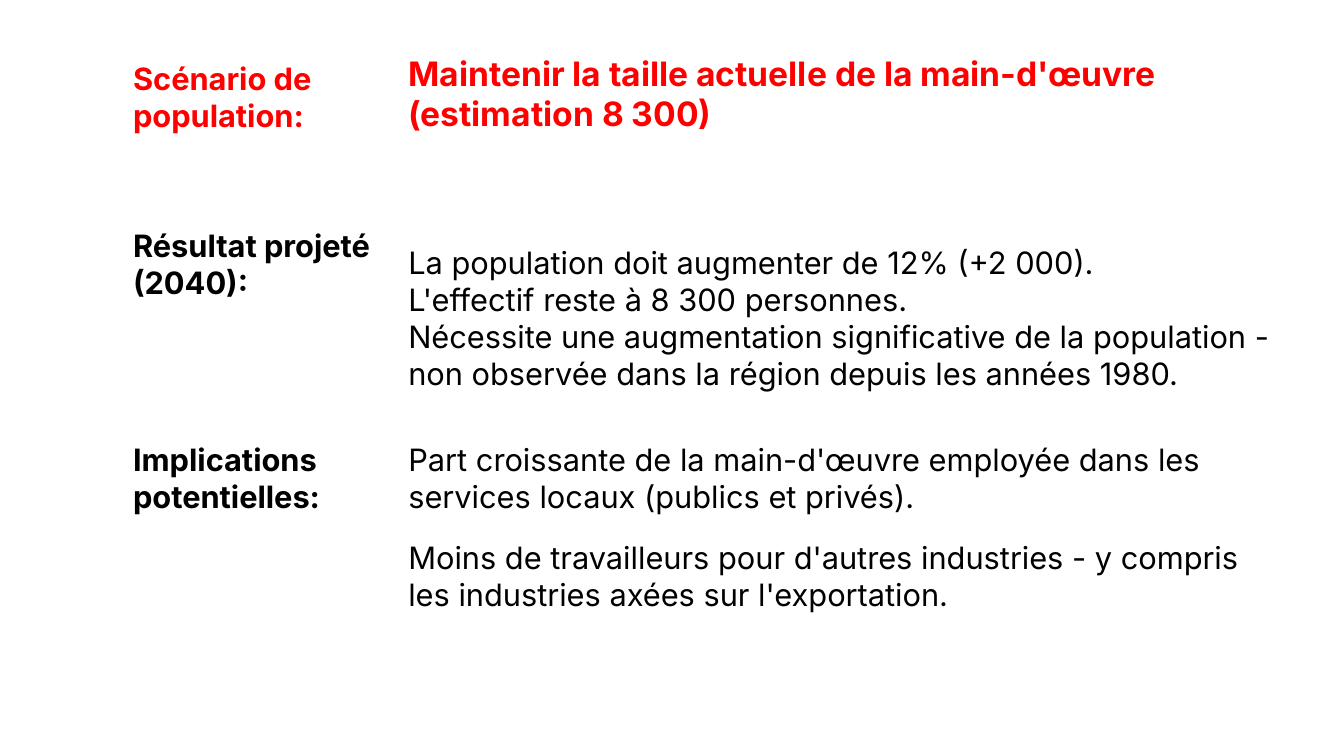
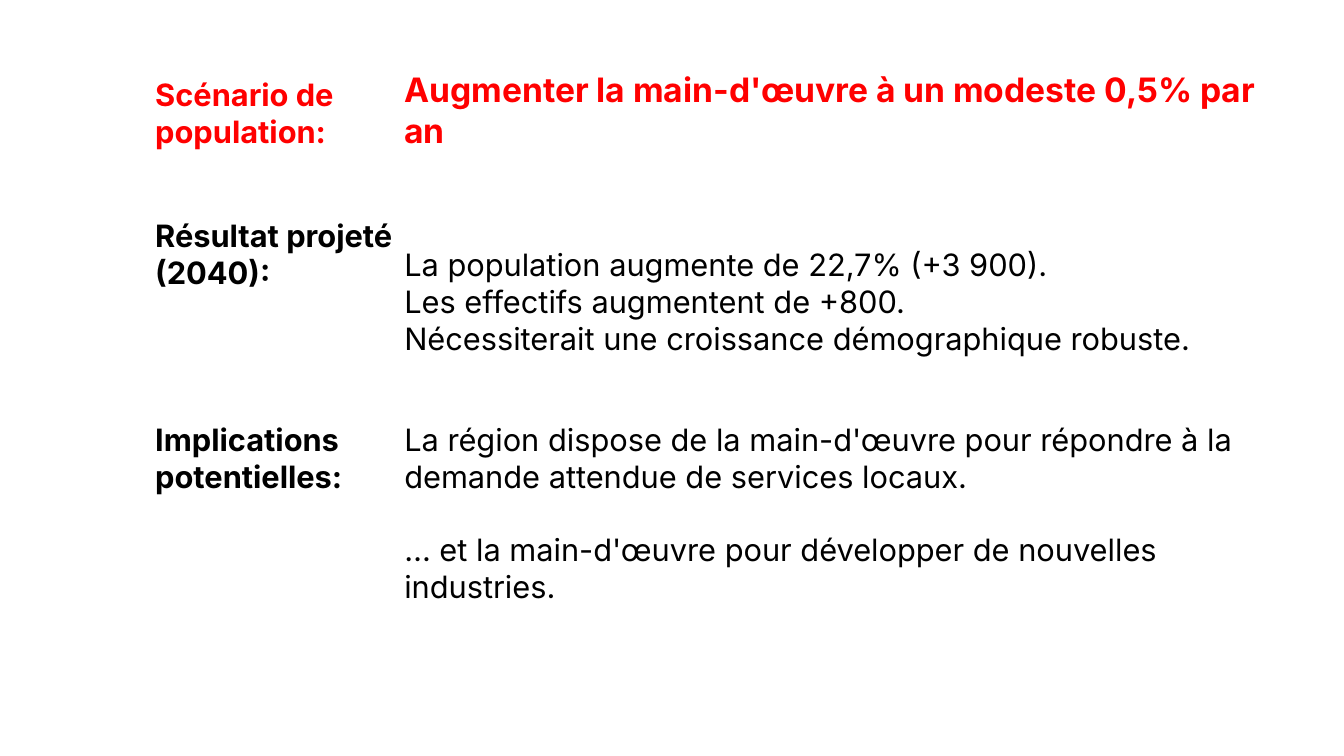
from dataclasses import dataclass

from lxml import etree
from pptx import Presentation
from pptx.dml.color import RGBColor
from pptx.enum.text import MSO_ANCHOR
from pptx.oxml.ns import qn
from pptx.util import Pt

PX = 9144  # 100 px to the inch
LOW, MID = MSO_ANCHOR.BOTTOM, MSO_ANCHOR.MIDDLE
BLANK = 6


@dataclass(frozen=True)
class Theme:
    font: str = "Inter"
    red: str = "FF0000"
    ink: str = "000000"
    rule: str = "FFFFFF"
    rule_w: int = 1
    title: int = 24
    body: int = 22
    inset: int = 1


THEME = Theme()
LABELS = ("Scénario de population:", "Résultat projeté (2040):",
          "Implications potentielles:", "", "")

SLIDES = [
    dict(
        left=131, top=33, cols=(273, 861), rows=(101, 256, 122, 97, 110),
        texts=(
            ["Maintenir la taille actuelle de la main-d'œuvre (estimation 8 300)"],
            ["La population doit augmenter de 12% (+2 000).",
             "L'effectif reste à 8 300 personnes.",
             "Nécessite une augmentation significative de la population - "
             "non observée dans la région depuis les années 1980."],
            ["Part croissante de la main-d'œuvre employée dans les services "
             "locaux (publics et privés)."],
            ["Moins de travailleurs pour d'autres industries - y compris les "
             "industries axées sur l'exportation."],
            [],
        ),
    ),
    dict(
        left=153, top=36, cols=(247, 887), rows=(114, 205, 137, 109, 124),
        texts=(
            ["Augmenter la main-d'œuvre à un modeste 0,5% par an"],
            ["La population augmente de 22,7% (+3 900).",
             "Les effectifs augmentent de +800.",
             "Nécessiterait une croissance démographique robuste."],
            ["La région dispose de la main-d'œuvre pour répondre à la demande "
             "attendue de services locaux."],
            ["… et la main-d'œuvre pour développer de nouvelles industries."],
            [],
        ),
    ),
]


def px(n):
    return n * PX


def add_rules(cell):
    """Draw the four borders, which must come before the fill in the XML."""
    props = cell._tc.get_or_add_tcPr()
    for i, side in enumerate(("lnL", "lnR", "lnT", "lnB")):
        line = etree.Element(qn("a:" + side), w=str(Pt(THEME.rule_w)))
        fill = etree.SubElement(line, qn("a:solidFill"))
        etree.SubElement(fill, qn("a:srgbClr"), val=THEME.rule)
        props.insert(i, line)


def fill_cell(cell, lines, size, color, bold, anchor=LOW):
    cell.fill.background()
    add_rules(cell)
    cell.margin_left = cell.margin_right = cell.margin_top = px(THEME.inset)
    cell.margin_bottom = 0
    cell.vertical_anchor = anchor
    frame = cell.text_frame
    frame.text = "\n".join(lines)
    for para in frame.paragraphs:
        font = para.font
        font.name, font.size, font.bold = THEME.font, Pt(size), bold
        font.color.rgb = RGBColor.from_string(color)


def add_grid(slide, left, top, cols, rows, texts):
    shape = slide.shapes.add_table(
        len(rows), len(cols), px(left), px(top), px(sum(cols)), px(sum(rows)))
    table = shape.table
    table.first_row = table.horz_banding = False
    for col, width in zip(table.columns, cols):
        col.width = px(width)
    for i, (height, label, lines) in enumerate(zip(rows, LABELS, texts)):
        table.rows[i].height = px(height)
        head = i == 0
        color = THEME.red if head else THEME.ink
        size = THEME.title if head else THEME.body
        fill_cell(table.cell(i, 0), [label], THEME.body, color, True,
                  MID if i == 1 else LOW)
        fill_cell(table.cell(i, 1), lines, size, color, head)


def main():
    deck = Presentation()
    deck.slide_width, deck.slide_height = px(1333), px(750)
    for data in SLIDES:
        slide = deck.slides.add_slide(deck.slide_layouts[BLANK])
        add_grid(slide, **data)
    deck.save("out.pptx")


if __name__ == "__main__":
    main()
